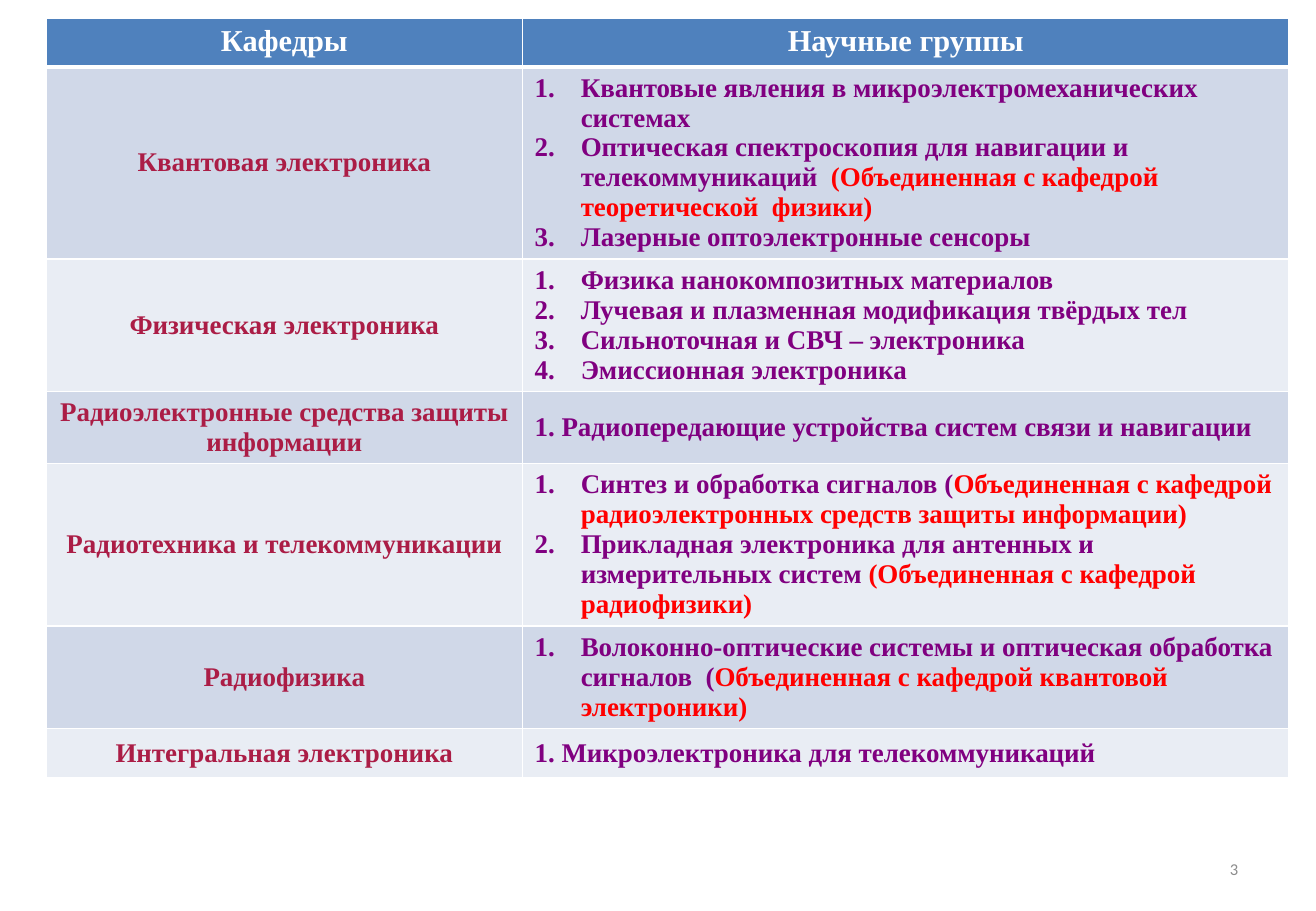
from dataclasses import dataclass

from lxml.etree import SubElement
from pptx import Presentation
from pptx.dml.color import RGBColor as RGB
from pptx.enum.text import MSO_ANCHOR as ANCHOR, PP_ALIGN as ALIGN
from pptx.oxml.ns import qn
from pptx.util import Inches, Pt


@dataclass(frozen=True)
class Theme:
    serif: str = "Times New Roman"
    sans: str = "Calibri"
    head_size: float = 18
    body_size: float = 16
    number_size: float = 9.8
    white: str = "FFFFFF"
    head_fill: str = "4F81BD"
    bands: tuple = ("D0D8E8", "E9EDF4")
    department: str = "AB1D46"
    group: str = "800080"
    joint: str = "FF0000"
    page_number: str = "8C8C8C"


T = Theme()

HEADERS = ("Кафедры", "Научные группы")

# Department, row height, and its groups as (name, joint department note)
DEPARTMENTS = [
    ("Квантовая электроника", 1.58, [
        ("Квантовые явления в микроэлектромеханических системах", ""),
        ("Оптическая спектроскопия для навигации и телекоммуникаций  ",
         "(Объединенная с кафедрой теоретической  физики)"),
        ("Лазерные оптоэлектронные сенсоры", ""),
    ]),
    ("Физическая электроника", 1.09, [
        ("Физика нанокомпозитных материалов", ""),
        ("Лучевая и плазменная модификация твёрдых тел", ""),
        ("Сильноточная и СВЧ – электроника", ""),
        ("Эмиссионная электроника", ""),
    ]),
    ("Радиоэлектронные средства защиты информации", 0.59, [
        ("1. Радиопередающие устройства систем связи и навигации", ""),
    ]),
    ("Радиотехника и телекоммуникации", 1.34, [
        ("Синтез и обработка сигналов (",
         "Объединенная с кафедрой радиоэлектронных средств защиты информации)"),
        ("Прикладная электроника для антенных и измерительных систем ",
         "(Объединенная с кафедрой радиофизики)"),
    ]),
    ("Радиофизика", 0.84, [
        ("Волоконно-оптические системы и оптическая обработка сигналов  (",
         "Объединенная с кафедрой квантовой электроники)"),
    ]),
    ("Интегральная электроника", 0.41, [
        ("1. Микроэлектроника для телекоммуникаций", ""),
    ]),
]


def add_run(p, text, size, color, font=T.serif, bold=True):
    r = p.add_run()
    r.text = text
    r.font.name, r.font.size, r.font.bold = font, Pt(size), bold
    r.font.color.rgb = RGB.from_string(color)


def style_cell(cell, fill, top=1, bottom=1):
    """Set white borders (widths in points) and then the fill of a cell."""
    tc_pr = cell._tc.get_or_add_tcPr()
    for side, width in zip("LRTB", (1, 1, top, bottom)):
        ln = SubElement(tc_pr, qn(f"a:ln{side}"), w=str(Pt(width)))
        SubElement(SubElement(ln, qn("a:solidFill")), qn("a:srgbClr"), val=T.white)
    cell.fill.solid()
    cell.fill.fore_color.rgb = RGB.from_string(fill)


prs = Presentation()
prs.slide_width, prs.slide_height = Inches(10.83), Inches(7.5)
s = prs.slides.add_slide(prs.slide_layouts[6])

# Table of departments
col_widths = (3.92, 6.31)
row_heights = [0.4] + [height for _, height, _ in DEPARTMENTS]
frame = s.shapes.add_table(
    len(row_heights), len(col_widths), Inches(0.38), Inches(0.15),
    Inches(sum(col_widths)), Inches(sum(row_heights)))
table = frame.table
table.first_row = table.horz_banding = False
for col, width in zip(table.columns, col_widths):
    col.width = Inches(width)
for row, height in zip(table.rows, row_heights):
    row.height = Inches(height)

for c, header in enumerate(HEADERS):
    cell = table.cell(0, c)
    style_cell(cell, T.head_fill, bottom=3)
    p = cell.text_frame.paragraphs[0]
    p.alignment = ALIGN.CENTER
    add_run(p, header, T.head_size, T.white)

for i, (department, _, groups) in enumerate(DEPARTMENTS):
    name_cell, group_cell = table.cell(i + 1, 0), table.cell(i + 1, 1)
    for cell in (name_cell, group_cell):
        style_cell(cell, T.bands[i % 2], top=1 if i else 3)
        cell.vertical_anchor = ANCHOR.MIDDLE

    p = name_cell.text_frame.paragraphs[0]
    p.alignment = ALIGN.CENTER
    add_run(p, department, T.body_size, T.department)

    tf = group_cell.text_frame
    for n, (group, joint) in enumerate(groups):
        p = tf.add_paragraph() if n else tf.paragraphs[0]
        if not group.startswith("1."):
            p_pr = p._p.get_or_add_pPr()
            p_pr.set("marL", str(Inches(0.38)))
            p_pr.set("indent", str(-Inches(0.38)))
            SubElement(p_pr, qn("a:buFont"), typeface="+mj-lt")
            SubElement(p_pr, qn("a:buAutoNum"), type="arabicPeriod")
        add_run(p, group, T.body_size, T.group)
        if joint:
            add_run(p, joint, T.body_size, T.joint)

# Page number
tf = s.shapes.add_textbox(
    Inches(7.76), Inches(6.95), Inches(2.53), Inches(0.4)).text_frame
tf.word_wrap = True
tf.vertical_anchor = ANCHOR.MIDDLE
p = tf.paragraphs[0]
p.alignment = ALIGN.RIGHT
add_run(p, "3", T.number_size, T.page_number, T.sans, bold=False)

prs.save("out.pptx")
